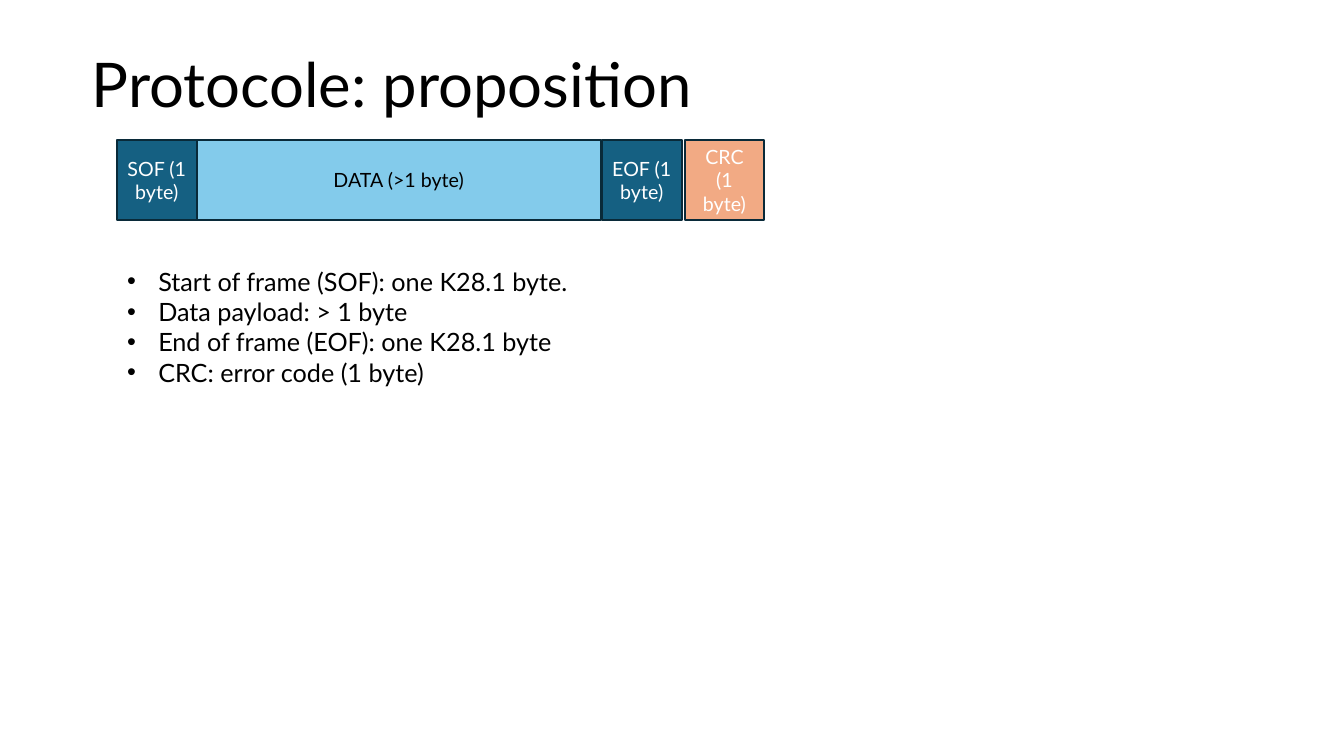
from dataclasses import dataclass

from pptx import Presentation, util as u
from pptx.dml.color import RGBColor
from pptx.enum import shapes, text
from pptx.oxml.xmlchemy import OxmlElement

PX = 9144  # EMU per px, 100 px to the inch


@dataclass(frozen=True)
class Theme:
    font: str = "Lato"
    ink: str = "000000"
    paper: str = "FFFFFF"
    marker: str = "156082"
    payload: str = "83CBEB"
    check: str = "F2AA84"
    outline: str = "092A39"
    title_size: int = 44
    list_size: int = 18
    field_size: int = 14
    line_width: float = 1.5


THEME = Theme()

# Frame fields: label, left, width, fill, text colour
FIELD_TOP, FIELD_HEIGHT, FIELD_WIDTH = 139, 79, 79
FIELDS = [
    ("SOF (1 byte)", 116, FIELD_WIDTH, THEME.marker, THEME.paper),
    ("DATA (>1 byte)", 195, 401, THEME.payload, THEME.ink),
    ("EOF (1 byte)", 597, FIELD_WIDTH, THEME.marker, THEME.paper),
    ("CRC (1 byte)", 679, FIELD_WIDTH, THEME.check, THEME.paper),
]
DEFINITIONS = [
    "Start of frame (SOF): one K28.1 byte.",
    "Data payload: > 1 byte",
    "End of frame (EOF): one K28.1 byte",
    "CRC: error code (1 byte)",
]


def px(*lengths):
    return [u.Emu(length * PX) for length in lengths]


def apply(target, formats):
    for name, value in formats.items():
        setattr(target, name, value)


def place(box, *bounds):
    apply(box, dict(zip(("left", "top", "width", "height"), px(*bounds))))


def write(para, words, size, color, **formats):
    span = para.add_run()
    span.text = words
    apply(span.font, {"name": THEME.font, "size": u.Pt(size)})
    span.font.color.rgb = RGBColor.from_string(color)
    apply(para, formats)


def add_bullet(para, indent):
    props = para._p.get_or_add_pPr()
    for name, value in {"marL": indent, "indent": -indent}.items():
        props.set(name, str(value * PX))
    face = OxmlElement("a:buFont")
    face.set("typeface", "Arial")
    bullet = OxmlElement("a:buChar")
    bullet.set("char", "•")
    props.extend([face, bullet])


def fill_title(box, words):
    place(box, 81, 14, 1150, 145)
    apply(box.text_frame, {"vertical_anchor": text.MSO_ANCHOR.MIDDLE, "word_wrap": True})
    write(box.text_frame.paragraphs[0], words, THEME.title_size, THEME.ink,
          alignment=text.PP_ALIGN.LEFT, line_spacing=0.9)


def fill_list(box, lines):
    place(box, 116, 259, 622, 131)
    frame = box.text_frame
    apply(frame, {"word_wrap": True, "auto_size": text.MSO_AUTO_SIZE.SHAPE_TO_FIT_TEXT,
                  "vertical_anchor": text.MSO_ANCHOR.TOP})
    for index, line in enumerate(lines):
        para = frame.add_paragraph() if index else frame.paragraphs[0]
        write(para, line, THEME.list_size, THEME.ink, space_before=u.Pt(0))
        add_bullet(para, 31)


def add_field(page, label, left, width, fill, color):
    box = page.shapes.add_shape(shapes.MSO_SHAPE.RECTANGLE,
                                *px(left, FIELD_TOP, width, FIELD_HEIGHT))
    box.shadow.inherit = False
    box.fill.solid()
    box.fill.fore_color.rgb = RGBColor.from_string(fill)
    box.line.color.rgb = RGBColor.from_string(THEME.outline)
    box.line.width = u.Pt(THEME.line_width)
    apply(box.text_frame, {"word_wrap": True, "vertical_anchor": text.MSO_ANCHOR.MIDDLE})
    write(box.text_frame.paragraphs[0], label, THEME.field_size, color,
          alignment=text.PP_ALIGN.CENTER)


def main():
    deck = Presentation()
    apply(deck, dict(zip(("slide_width", "slide_height"), px(1333, 750))))
    page = deck.slides.add_slide(deck.slide_layouts[1])

    # Title
    fill_title(page.shapes.title, "Protocole: proposition")

    # Frame layout
    for field in FIELDS:
        add_field(page, *field)

    # Field definitions
    fill_list(page.placeholders[1], DEFINITIONS)

    deck.save("out.pptx")


if __name__ == "__main__":
    main()
